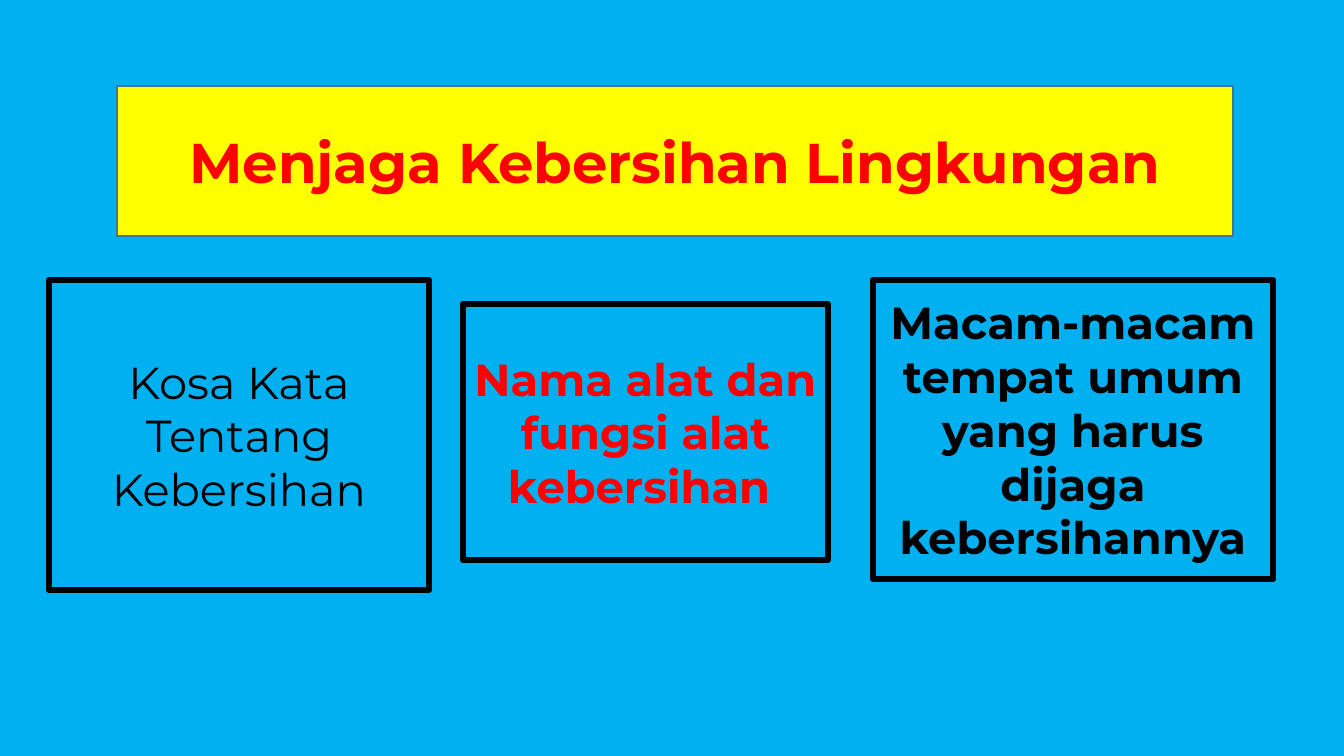
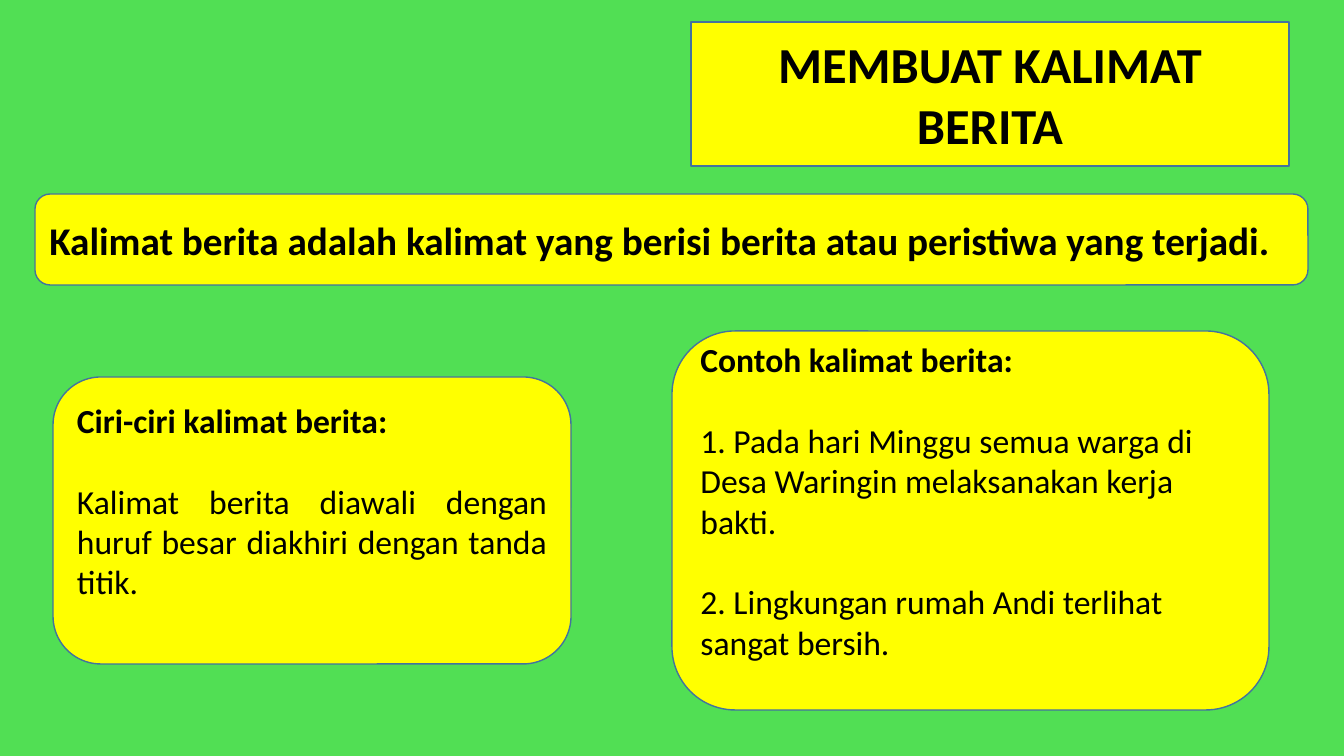
from lxml.etree import SubElement
from pptx import Presentation
from pptx.dml.color import RGBColor
from pptx.enum.shapes import MSO_SHAPE as SHAPE
from pptx.enum.text import MSO_ANCHOR as ANCHOR, MSO_AUTO_SIZE as FIT, PP_ALIGN as ALIGN
from pptx.oxml.ns import qn
from pptx.util import Emu, Pt

# Shared style
YELLOW, RED, BLACK, EDGE = "FFFF00", "FF0000", "000000", "43739E"
SKY, GREEN = "00B0F0", "51DF54"
HEAD_FONT, TEXT_FONT = "Montserrat", "Calibri"
EMU_PER_PX = 914400 / 100.8


def px(n):
    return Emu(round(n * EMU_PER_PX))


def rgb(hex_code):
    return RGBColor.from_string(hex_code)


def put_text(p, text, size=24, font=TEXT_FONT, color=BLACK, bold=False,
             align=ALIGN.LEFT, before=0):
    p.alignment = align
    p.space_before = Pt(before)
    r = p.add_run()
    r.text = text
    f = r.font
    f.name, f.size, f.bold = font, Pt(size), bold
    f.color.rgb = rgb(color)


class Deck:
    def __init__(self, width, height):
        self.prs = Presentation()
        self.prs.slide_width, self.prs.slide_height = px(width), px(height)
        self.s = None

    def slide(self, background):
        self.s = self.prs.slides.add_slide(self.prs.slide_layouts[5])
        fill = self.s.background.fill
        fill.solid()
        fill.fore_color.rgb = rgb(background)

    def paint(self, sp, fill, line, weight):
        """Fill and outline a shape and prepare its text frame."""
        if fill:
            sp.fill.solid()
            sp.fill.fore_color.rgb = rgb(fill)
        else:
            sp.fill.background()
        sp.line.color.rgb = rgb(line)
        sp.line.width = Pt(weight)
        tf = sp.text_frame
        tf.word_wrap = True
        tf.auto_size = FIT.NONE
        tf.vertical_anchor = ANCHOR.MIDDLE
        return tf

    def title(self, text, x, y, w, h, preset="roundRect", **fmt):
        """Turn the title placeholder into a rounded yellow plate."""
        sp = self.s.shapes.title
        sp.left, sp.top, sp.width, sp.height = map(px, (x, y, w, h))
        geom = SubElement(sp._element.spPr, qn("a:prstGeom"), prst=preset)
        SubElement(geom, qn("a:avLst"))
        tf = self.paint(sp, YELLOW, EDGE, 1)
        put_text(tf.paragraphs[0], text, bold=True, align=ALIGN.CENTER, **fmt)

    def box(self, x, y, w, h, kind=SHAPE.ROUNDED_RECTANGLE, fill=YELLOW,
            line=EDGE, weight=1):
        sp = self.s.shapes.add_shape(kind, *map(px, (x, y, w, h)))
        sp.shadow.inherit = False
        return self.paint(sp, fill, line, weight)

    def frame(self, text, x, y, w, h, **fmt):
        """Hollow box with a heavy black outline."""
        tf = self.box(x, y, w, h, SHAPE.RECTANGLE, None, BLACK, 4.5)
        put_text(tf.paragraphs[0], text, size=32, font=HEAD_FONT,
                 align=ALIGN.CENTER, **fmt)

    def banner(self, text, x, y, w, h):
        tf = self.box(x, y, w, h)
        put_text(tf.paragraphs[0], text, size=28, bold=True)

    def card(self, heading, items, x, y, w, h, align=ALIGN.LEFT):
        """Bold heading with items one line apart, raised half a line."""
        tf = self.box(x, y, w, h)
        tf.margin_bottom = px(45)
        put_text(tf.paragraphs[0], heading, bold=True)
        for item in items:
            put_text(tf.add_paragraph(), item, align=align, before=29)


def main():
    deck = Deck(1344, 756)

    # Slide 1: topic overview
    deck.slide(SKY)
    deck.title("Menjaga Kebersihan Lingkungan", 117, 86, 1116, 150,
               size=40, font=HEAD_FONT, color=RED)
    deck.frame("Kosa Kata Tentang Kebersihan", 49, 280, 380, 310)
    deck.frame("Nama alat dan fungsi alat kebersihan ", 463, 304, 365, 256,
               color=RED, bold=True)
    deck.frame("Macam-macam tempat umum yang harus dijaga kebersihannya",
               873, 280, 400, 299, bold=True)

    # Slide 2: news sentences
    deck.slide(GREEN)
    deck.title("MEMBUAT KALIMAT BERITA", 691, 22, 598, 144,
               preset="flowChartAlternateProcess", size=36)
    deck.banner("Kalimat berita adalah kalimat yang berisi berita atau "
                "peristiwa yang terjadi.", 35, 194, 1273, 91)
    deck.card("Ciri-ciri kalimat berita:",
              ["Kalimat berita diawali dengan huruf besar diakhiri dengan "
               "tanda titik."],
              53, 377, 518, 287, align=ALIGN.JUSTIFY)
    deck.card("Contoh kalimat berita:",
              ["1. Pada hari Minggu semua warga di Desa Waringin "
               "melaksanakan kerja bakti.",
               "2. Lingkungan rumah Andi terlihat sangat bersih."],
              672, 331, 597, 379)

    deck.prs.save("out.pptx")


if __name__ == "__main__":
    main()
